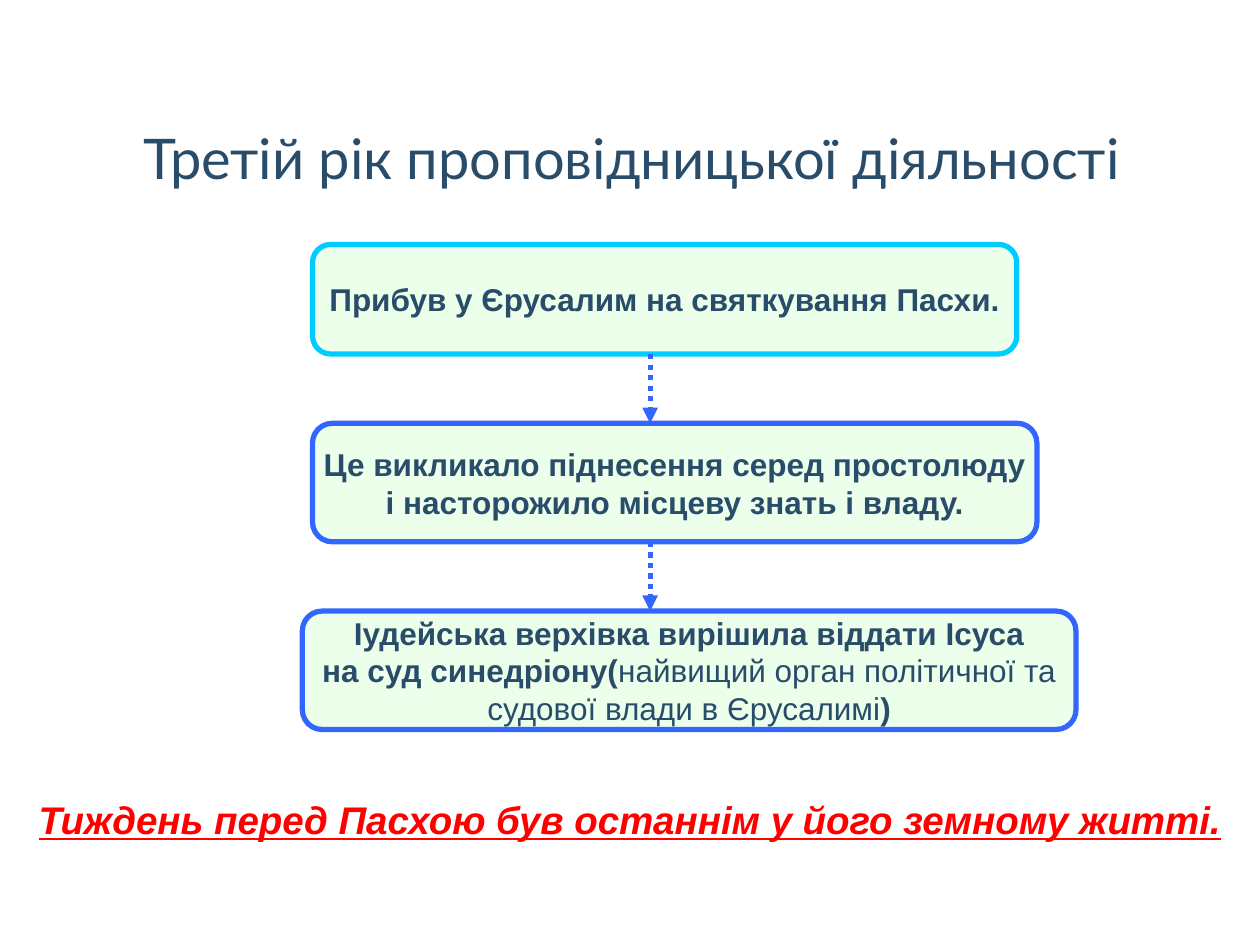
import pptx
import pptx.util
import pptx.dml.color
import pptx.enum.dml
import pptx.enum.shapes
import pptx.enum.text
import pptx.oxml.ns
from lxml import etree

HUES = {"navy": "284C6A", "mint": "EBFFEB", "cyan": "00CCFF",
        "blue": "3366FF", "red": "FF0000"}
WIDE, HIGH = 10, 7.5
AXIS = 5.16  # x of the arrows
GAP = 0.55   # height of each arrow
TOP = 1.94   # top of the first step

# Each step: left, width, height, line colour, paragraphs of (text, bold) runs
STEPS = [
    (2.48, 5.59, 0.87, "cyan",
     [[("Прибув у Єрусалим на святкування Пасхи.", True)]]),
    (2.48, 5.75, 0.94, "blue",
     [[("Це викликало піднесення серед простолюду", True)],
      [("і насторожило місцеву знать і владу.", True)]]),
    (2.4, 6.14, 0.94, "blue",
     [[("Іудейська верхівка вирішила віддати Ісуса", True)],
      [("на суд синедріону(", True), ("найвищий орган політичної та", False)],
      [("судової влади в Єрусалимі", False), (")", True)]]),
]


def inch(*sizes):
    return [pptx.util.Inches(size) for size in sizes]


def hue(name):
    return pptx.dml.color.RGBColor.from_string(HUES[name])


def style(para, size, face, color):
    para.alignment = pptx.enum.text.PP_ALIGN.CENTER
    para.font.size = pptx.util.Pt(size)
    para.font.name = face
    para.font.color.rgb = hue(color)


def put_title(slide, text):
    title = slide.shapes.title
    title.left, title.top, title.width, title.height = inch(0.5, 0.75, 8.83, 1)
    frame = title.text_frame
    frame.text = text
    frame.auto_size = pptx.enum.text.MSO_AUTO_SIZE.NONE
    frame.vertical_anchor = pptx.enum.text.MSO_ANCHOR.MIDDLE
    frame.margin_left = pptx.util.Inches(0.3)
    style(frame.paragraphs[0], 32, "Lato", "navy")


def add_step(slide, left, top, width, height, edge, lines):
    box = slide.shapes.add_shape(
        pptx.enum.shapes.MSO_SHAPE.ROUNDED_RECTANGLE,
        *inch(left, top, width, height))
    box.shadow.inherit = False
    box.fill.solid()
    box.fill.fore_color.rgb = hue("mint")
    box.line.color.rgb = hue(edge)
    box.line.width = pptx.util.Pt(3)
    frame = box.text_frame
    frame.word_wrap = False
    frame.vertical_anchor = pptx.enum.text.MSO_ANCHOR.MIDDLE
    for row, runs in enumerate(lines):
        para = frame.add_paragraph() if row else frame.paragraphs[0]
        style(para, 18, "Arial", "navy")
        for text, bold in runs:
            run = para.add_run()
            run.text = text
            run.font.bold = bold


def add_arrow(slide, top):
    arrow = slide.shapes.add_connector(
        pptx.enum.shapes.MSO_CONNECTOR.STRAIGHT,
        *inch(AXIS, top, AXIS, top + GAP))
    arrow.line.color.rgb = hue("blue")
    arrow.line.width = pptx.util.Pt(3)
    arrow.line.dash_style = pptx.enum.dml.MSO_LINE.ROUND_DOT
    # Arrowhead, and no shadow
    qn = pptx.oxml.ns.qn
    props = arrow._element.spPr
    etree.SubElement(props.find(qn("a:ln")), qn("a:tailEnd"), type="triangle")
    etree.SubElement(props, qn("a:effectLst"))


def add_note(slide, text):
    note = slide.shapes.add_textbox(*inch(0, 6.27, WIDE, 0.47))
    frame = note.text_frame
    frame.word_wrap = True
    frame.auto_size = pptx.enum.text.MSO_AUTO_SIZE.SHAPE_TO_FIT_TEXT
    frame.text = text
    para = frame.paragraphs[0]
    style(para, 22, "Arial", "red")
    para.font.bold = para.font.italic = para.font.underline = True


def main():
    deck = pptx.Presentation()
    deck.slide_width, deck.slide_height = inch(WIDE, HIGH)
    slide = deck.slides.add_slide(deck.slide_layouts[5])
    put_title(slide, "Третій рік проповідницької діяльності")

    # Steps from top to bottom, with an arrow in each gap
    top, ends = TOP, []
    for left, width, height, edge, lines in STEPS:
        add_step(slide, left, top, width, height, edge, lines)
        ends.append(top + height)
        top += height + GAP
    for end in ends[:-1]:
        add_arrow(slide, end)

    add_note(slide, "Тиждень перед Пасхою був останнім у його земному житті.")
    deck.save("out.pptx")


if __name__ == "__main__":
    main()
